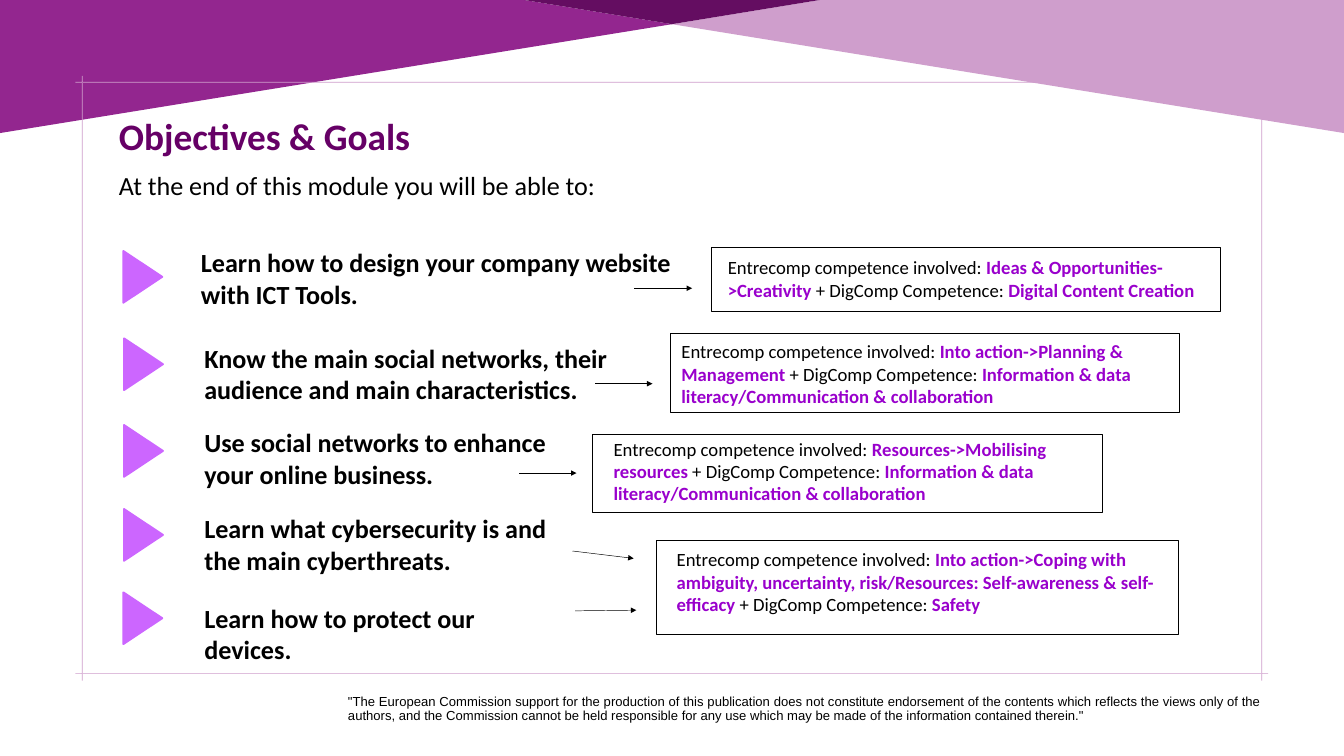
from lxml import etree
from pptx import Presentation
from pptx.dml.color import RGBColor
from pptx.enum.shapes import MSO_CONNECTOR, MSO_SHAPE
from pptx.enum.text import MSO_AUTO_SIZE, PP_ALIGN
from pptx.oxml.ns import qn
from pptx.util import Inches, Pt

STRAIGHT = MSO_CONNECTOR.STRAIGHT
TRIANGLE = MSO_SHAPE.ISOSCELES_TRIANGLE
RECTANGLE = MSO_SHAPE.RECTANGLE
GROW = MSO_AUTO_SIZE.SHAPE_TO_FIT_TEXT
LEFT = PP_ALIGN.LEFT
JUSTIFY = PP_ALIGN.JUSTIFY

COLORS = {
    "purple": "93268F",
    "lilac": "CF9ECC",
    "plum": "640D61",
    "title": "660066",
    "marker": "CC66FF",
    "accent": "9900CC",
    "black": "000000",
}

WEDGES = [
    ("purple", [(0, 1.98), (0, 0), (7.8, 0), (10, 0.36)]),
    ("lilac", [(20, 1.98), (10, 0.36), (12.2, 0), (20, 0)]),
    ("plum", [(10, 0.36), (7.8, 0), (12.2, 0)]),
]

GOALS = [
    ("Learn how to design your company website with ICT Tools.", 2.87, 3.62, 7.58, 1.04),
    ("Know the main social networks, their audience and main characteristics.",
     2.92, 5.04, 7.54, 1.04),
    ("Use social networks to enhance your online business.", 2.92, 6.3, 5.6, 1.04),
    ("Learn what cybersecurity is and the main cyberthreats.", 2.92, 7.58, 5.6, 1.04),
    ("Learn how to protect our devices.", 2.92, 8.91, 5.6, 0.57),
]
MARKERS = [(1.74, 3.83), (1.75, 5.13), (1.75, 6.42), (1.75, 7.67), (1.74, 8.91)]

COMPETENCES = [
    ("Ideas & Opportunities->Creativity", "Digital Content Creation",
     (10.71, 3.76, 7.58, 0.77), (10.58, 3.68, 7.58, 0.96)),
    ("Into action->Planning & Management",
     "Information & data literacy/Communication & collaboration",
     (10.02, 5.01, 7.58, 1.11), (9.97, 4.96, 7.58, 1.17)),
    ("Resources->Mobilising resources",
     "Information & data literacy/Communication & collaboration",
     (9.01, 6.46, 7.58, 1.11), (8.82, 6.46, 7.58, 1.17)),
    ("Into action->Coping with ambiguity, uncertainty, risk/Resources: "
     "Self-awareness & self-efficacy", "Safety",
     (9.95, 8.11, 7.58, 1.11), (9.77, 8.04, 7.77, 1.4)),
]

ARROWS = [
    (9.44, 4.29, 10.3, 4.29),
    (8.86, 5.71, 9.71, 5.71),
    (7.73, 7.04, 8.58, 7.04),
    (8.52, 8.2, 9.43, 8.31),
    (8.56, 9.09, 9.47, 9.08),
]

DISCLAIMER = (
    '"The European Commission support for the production of this publication does not '
    "constitute endorsement of the contents which reflects the views only of the authors, "
    "and the Commission cannot be held responsible for any use which may be made of the "
    'information contained therein."'
)


def rgb(name):
    return RGBColor.from_string(COLORS[name])


def inches(values):
    return [Inches(value) for value in values]


def add_outline(slide, contours, color):
    points = [[inches(point) for point in contour] for contour in contours]
    builder = slide.shapes.build_freeform(*points[0][0])
    builder.add_line_segments(points[0][1:], close=True)
    for contour in points[1:]:
        builder.move_to(*contour[0])
        builder.add_line_segments(contour[1:], close=True)
    shape = builder.convert_to_shape()
    shape.shadow.inherit = False
    shape.fill.solid()
    shape.fill.fore_color.rgb = rgb(color)
    shape.line.fill.background()


def add_frame(slide):
    bars = [
        (1.12, 1.22, 18.87, 1.23),
        (1.12, 10.02, 18.87, 10.03),
        (1.22, 1.13, 1.23, 10.13),
        (18.77, 1.13, 18.78, 10.13),
    ]
    contours = [[(x1, y1), (x2, y1), (x2, y2), (x1, y2)] for x1, y1, x2, y2 in bars]
    add_outline(slide, contours, "lilac")


def add_text(slide, area, spans, size, font="Calibri", align=LEFT, inset=0.1):
    box = slide.shapes.add_textbox(*inches(area))
    frame = box.text_frame
    frame.word_wrap = True
    frame.auto_size = GROW
    frame.margin_left = frame.margin_right = Inches(inset)
    para = frame.paragraphs[0]
    para.alignment = align
    for text, color, bold in spans:
        span = para.add_run()
        span.text = text
        span.font.name = font
        span.font.size = Pt(size)
        span.font.bold = bold
        span.font.color.rgb = rgb(color)
    return para


def add_marker(slide, left, top):
    marker = slide.shapes.add_shape(TRIANGLE, *inches((left, top, 0.77, 0.58)))
    marker.rotation = 90
    marker.shadow.inherit = False
    marker.fill.solid()
    marker.fill.fore_color.rgb = rgb("marker")
    marker.line.color.rgb = rgb("marker")
    marker.line.width = Pt(2)


def add_border(slide, area):
    border = slide.shapes.add_shape(RECTANGLE, *inches(area))
    border.shadow.inherit = False
    border.fill.background()
    border.line.color.rgb = rgb("black")
    border.line.width = Pt(0.75)


def add_competence(slide, entrecomp, digcomp, text_area, border_area):
    spans = [
        ("Entrecomp competence involved: ", "black", False),
        (entrecomp, "accent", True),
        (" + DigComp Competence: ", "black", False),
        (digcomp, "accent", True),
    ]
    add_text(slide, text_area, spans, 20, inset=0.12)
    add_border(slide, border_area)


def add_arrow(slide, ends):
    arrow = slide.shapes.add_connector(STRAIGHT, *inches(ends))
    arrow.line.color.rgb = rgb("black")
    arrow.line.width = Pt(0.5)
    etree.SubElement(arrow.line._get_or_add_ln(), qn("a:tailEnd"), type="triangle")
    etree.SubElement(arrow._element.spPr, qn("a:effectLst"))


def main():
    deck = Presentation()
    deck.slide_width = Inches(20)
    deck.slide_height = Inches(11.25)
    page = deck.slides.add_slide(deck.slide_layouts[6])

    for color, points in WEDGES:
        add_outline(page, [points], color)
    add_frame(page)
    footer = add_text(page, (5.08, 10.29, 13.79, 0.52), [(DISCLAIMER, "black", False)],
                      14, font="Arial", align=JUSTIFY)
    footer.line_spacing = Pt(14.9)

    add_text(page, (1.67, 1.64, 6.56, 0.77), [("Objectives & Goals", "title", True)], 40)
    add_text(page, (1.67, 2.47, 10.98, 0.57),
             [("At the end of this module you will be able to:", "black", False)],
             28, align=JUSTIFY)

    for (goal, *area), marker in zip(GOALS, MARKERS):
        add_marker(page, *marker)
        add_text(page, area, [(goal, "black", True)], 28, inset=0.12)
    for competence in COMPETENCES:
        add_competence(page, *competence)
    for ends in ARROWS:
        add_arrow(page, ends)

    deck.save("out.pptx")


if __name__ == "__main__":
    main()
